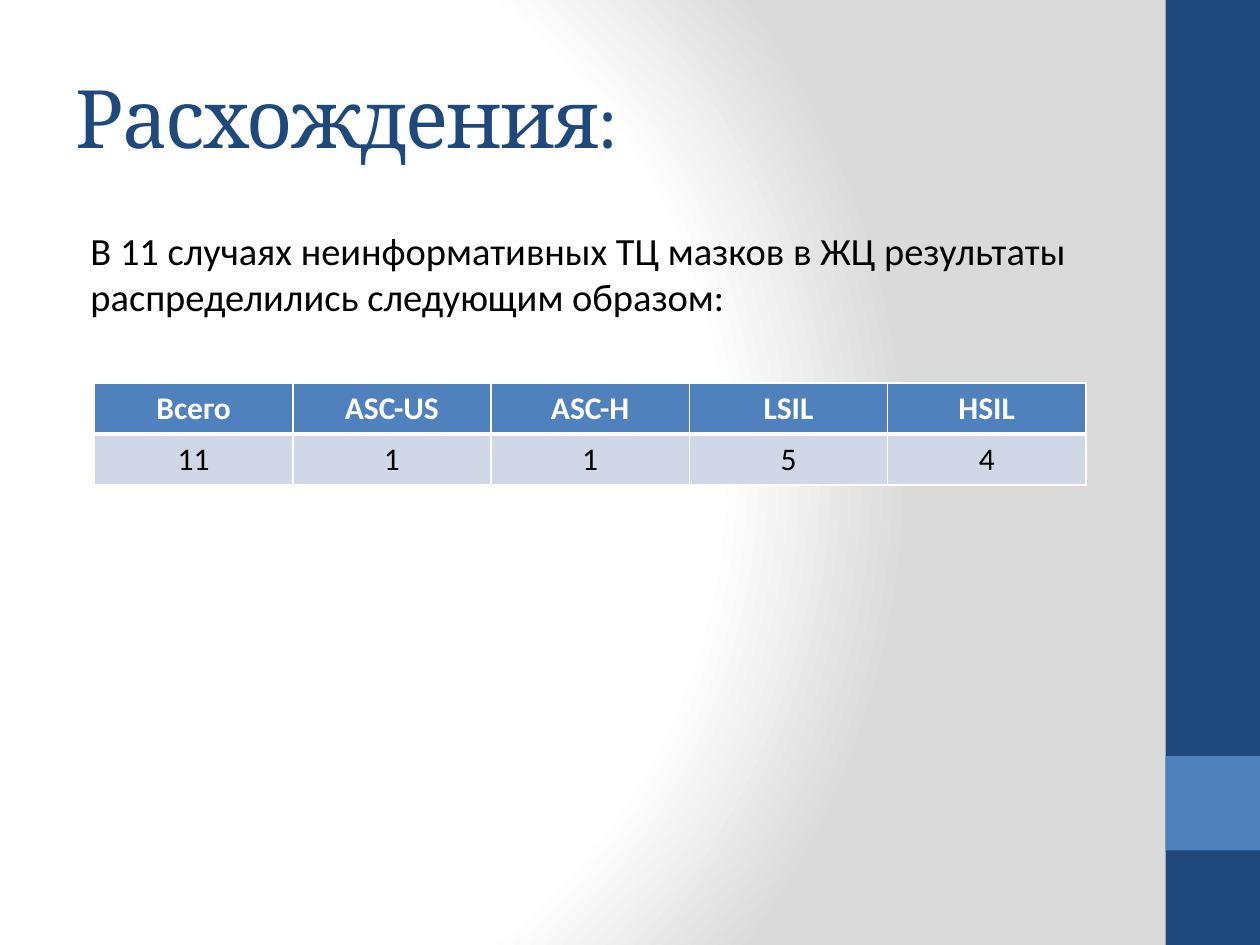
from dataclasses import dataclass

from lxml import etree
from pptx import Presentation, oxml
from pptx.dml.color import RGBColor
from pptx.enum import shapes, text
from pptx.oxml import ns
from pptx.util import Inches, Pt


@dataclass(frozen=True)
class Theme:
    """Colours, fonts and type sizes of the slide."""
    navy: str = "1F497D"
    blue: str = "4F81BD"
    pale: str = "D0D8E8"
    grey: str = "DADADA"
    white: str = "FFFFFF"
    black: str = "000000"
    heading: str = "Cambria"
    body: str = "Calibri"
    title_size: float = 46
    body_size: float = 22
    table_size: float = 18


THEME = Theme()
RESULTS = [
    ["Всего", "ASC-US", "ASC-H", "LSIL", "HSIL"],
    ["11", "1", "1", "5", "4"],
]


def paint_background(page):
    """Fill the page with a circular white to grey gradient."""
    page.background.fill.gradient()
    fill = page.element.find(".//" + ns.qn("a:gradFill"))
    stops = "".join(
        f'<a:gs pos="{place * 1000}"><a:srgbClr val="{color}"/></a:gs>'
        for place, color in [(0, THEME.white), (75, THEME.white), (100, THEME.grey)]
    )
    circle = oxml.parse_xml(
        f'<a:gradFill {ns.nsdecls("a")} rotWithShape="1"><a:gsLst>{stops}</a:gsLst>'
        '<a:path path="circle"><a:fillToRect l="20000" t="50000" r="100000" b="50000"/>'
        "</a:path></a:gradFill>"
    )
    fill.getparent().replace(fill, circle)


def add_block(page, left, top, width, height, color):
    """Add a plain filled rectangle."""
    block = page.shapes.add_shape(
        shapes.MSO_SHAPE.RECTANGLE, Inches(left), Inches(top), Inches(width), Inches(height)
    )
    block.shadow.inherit = False
    block.fill.solid()
    block.fill.fore_color.rgb = RGBColor.from_string(color)
    block.line.fill.background()


def write(frame, words, *, size, color=THEME.black, font=THEME.body, bold=False,
          align=text.PP_ALIGN.LEFT, indent=0, before=0, spacing=0):
    """Write one formatted paragraph into a text frame."""
    para = frame.paragraphs[0]
    para.alignment = align
    para.space_before = Pt(before)
    if indent:
        para._p.get_or_add_pPr().set("marL", str(Inches(indent)))
    span = para.add_run()
    span.text = words
    span.font.size = Pt(size)
    span.font.name = font
    span.font.bold = bold
    span.font.color.rgb = RGBColor.from_string(color)
    if spacing:
        span.font._element.set("spc", str(spacing * 100))


def add_text(page, left, top, width, height, words, anchor=text.MSO_ANCHOR.TOP, **style):
    """Add a wrapping text box."""
    box = page.shapes.add_textbox(Inches(left), Inches(top), Inches(width), Inches(height))
    box.text_frame.word_wrap = True
    box.text_frame.vertical_anchor = anchor
    write(box.text_frame, words, **style)


def set_borders(cell, **widths):
    """Draw white cell borders with the given widths in points."""
    props = cell._tc.get_or_add_tcPr()
    for place, (side, width) in enumerate(widths.items()):
        line = etree.Element(ns.qn(f"a:ln{side}"), w=str(Pt(width)))
        fill = etree.SubElement(line, ns.qn("a:solidFill"))
        etree.SubElement(fill, ns.qn("a:srgbClr"), val=THEME.white)
        props.insert(place, line)


def add_results(page, left, top, width, height, rows):
    """Add the results table with a bold header row."""
    frame = page.shapes.add_table(
        len(rows), len(rows[0]), Inches(left), Inches(top), Inches(width), Inches(height)
    )
    for row, values in enumerate(rows):
        header = row == 0
        for column, value in enumerate(values):
            cell = frame.table.cell(row, column)
            cell.fill.solid()
            cell.fill.fore_color.rgb = RGBColor.from_string(THEME.blue if header else THEME.pale)
            set_borders(cell, L=1, R=1, T=1 if header else 3, B=3 if header else 1)
            write(cell.text_frame, value, size=THEME.table_size, bold=header,
                  color=THEME.white if header else THEME.black, align=text.PP_ALIGN.CENTER)


def main():
    """Build and save the slide."""
    deck = Presentation()
    deck.slide_width, deck.slide_height = Inches(10), Inches(7.5)
    page = deck.slides.add_slide(deck.slide_layouts[6])
    paint_background(page)
    add_block(page, 9.25, 0, 0.75, 7.5, THEME.navy)
    add_block(page, 9.25, 6, 0.75, 0.75, THEME.blue)
    add_text(page, 0.5, 0.3, 8.33, 1.25, "Расхождения:", anchor=text.MSO_ANCHOR.MIDDLE,
             size=THEME.title_size, color=THEME.navy, font=THEME.heading, spacing=-1)
    add_text(page, 0.5, 1.75, 8.33, 5.25,
             "В 11 случаях неинформативных ТЦ мазков в ЖЦ результаты "
             "распределились следующим образом:",
             size=THEME.body_size, indent=0.12, before=4.4)
    add_results(page, 0.75, 3.04, 7.87, 0.81, RESULTS)
    deck.save("out.pptx")


if __name__ == "__main__":
    main()
